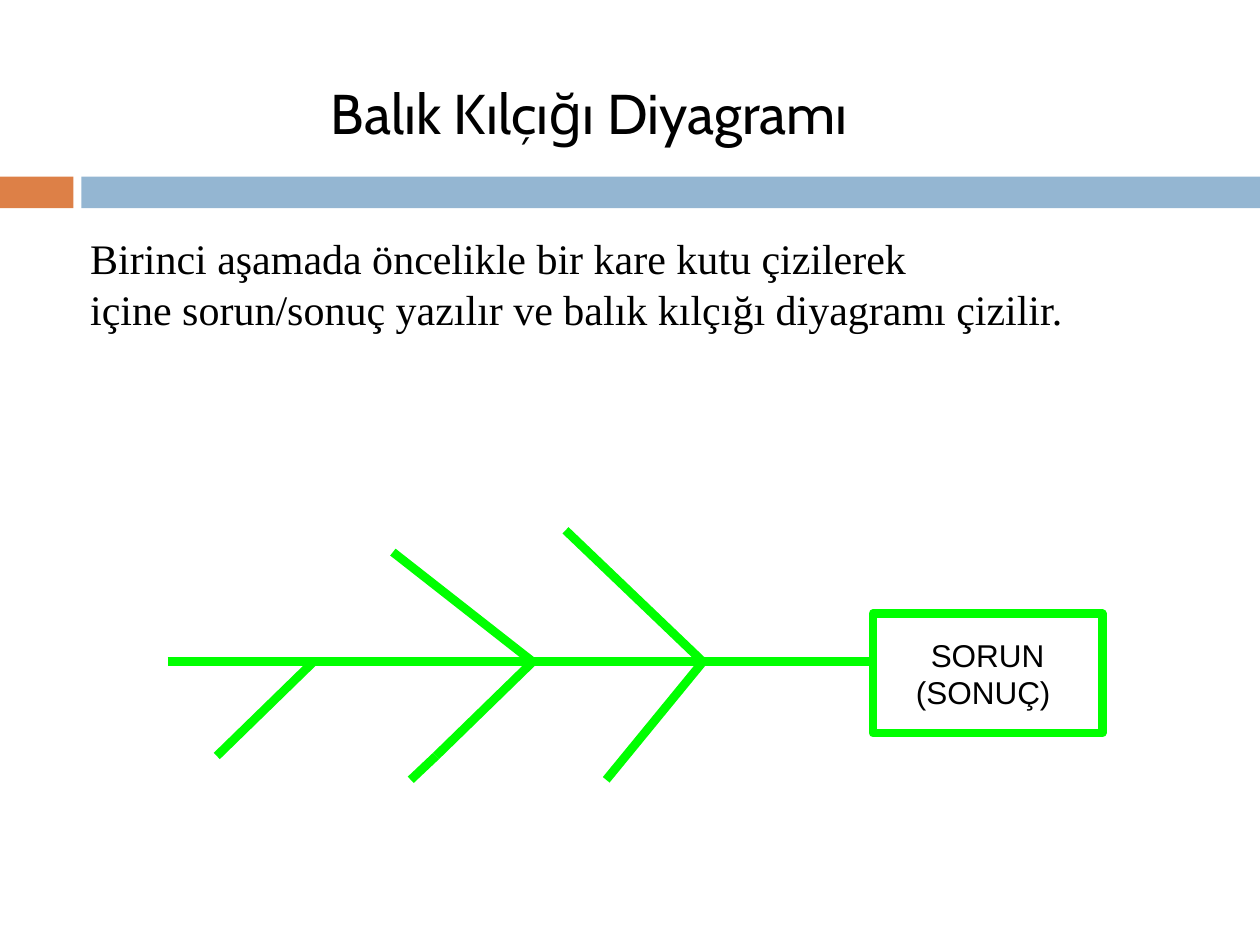
from dataclasses import dataclass

from lxml.etree import SubElement
from pptx import Presentation
from pptx.dml.color import RGBColor as RGB
from pptx.enum.shapes import MSO_CONNECTOR as Link, MSO_SHAPE as Form
from pptx.enum.text import MSO_ANCHOR as Anchor, MSO_AUTO_SIZE as Fit, PP_ALIGN as Align
from pptx.oxml.ns import qn
from pptx.util import Cm, Pt


@dataclass(frozen=True)
class Theme:
    ink: RGB = RGB(0, 0, 0)
    accent: RGB = RGB(0xDD, 0x80, 0x47)
    band: RGB = RGB(0x94, 0xB6, 0xD2)
    bone: RGB = RGB(0, 0xFF, 0)
    weight: int = 5
    title: tuple = ("Cabin", 32)
    body: tuple = ("Times New Roman", 24)
    label: tuple = ("Arial", 18)


class Page:
    def __init__(self, slide, theme):
        self.shapes = slide.shapes
        self.theme = theme

    def fill_text(self, frame, text, font, align):
        frame.text = text
        for para in frame.paragraphs:
            para.alignment = align
            for run in para.runs:
                run.font.name, run.font.size = font[0], Pt(font[1])
                run.font.color.rgb = self.theme.ink

    def text(self, area, text, font, align=Align.LEFT, wrap=True):
        frame = self.shapes.add_textbox(*map(Cm, area)).text_frame
        frame.word_wrap = wrap
        self.fill_text(frame, text, font, align)
        return frame

    def rect(self, area):
        shape = self.shapes.add_shape(Form.RECTANGLE, *map(Cm, area))
        shape.shadow.inherit = False
        return shape

    def bar(self, area, color):
        shape = self.rect(area)
        shape.fill.solid()
        shape.fill.fore_color.rgb = color
        shape.line.fill.background()

    def stroke(self, line):
        line.color.rgb = self.theme.bone
        line.width = Pt(self.theme.weight)

    def box(self, area, text):
        shape = self.rect(area)
        shape.fill.background()
        self.stroke(shape.line)
        shape.text_frame.vertical_anchor = Anchor.MIDDLE
        self.fill_text(shape.text_frame, text, self.theme.label, Align.CENTER)

    def bone(self, start, end):
        line = self.shapes.add_connector(Link.STRAIGHT, *map(Cm, (*start, *end)))
        self.stroke(line.line)
        SubElement(line._element.spPr, qn("a:effectLst"))


def main():
    deck = Presentation()
    deck.slide_width, deck.slide_height = Cm(25.4), Cm(19.05)
    theme = Theme()
    page = Page(deck.slides.add_slide(deck.slide_layouts[6]), theme)

    page.bar((0, 3.56, 1.48, 0.64), theme.accent)
    page.bar((1.64, 3.56, 23.76, 0.64), theme.band)

    body = page.text(
        (1.57, 4.57, 20.5, 2.31),
        "Birinci aşamada öncelikle bir kare kutu çizilerek\n"
        "içine sorun/sonuç yazılır ve balık kılçığı diyagramı çizilir.",
        theme.body, wrap=False)
    body.auto_size = Fit.SHAPE_TO_FIT_TEXT
    title = page.text((0.58, 1.37, 22.61, 1.8), "Balık Kılçığı Diyagramı",
                      theme.title, Align.CENTER)
    title.vertical_anchor = Anchor.MIDDLE

    spine, head = 13.34, 17.6
    page.bone((3.38, spine), (head, spine))
    ribs = {
        6.32: [(4.37, 15.24)],
        10.74: [(7.92, 11.13), (8.79, 15.24)],
        14.17: [(11.4, 10.69), (12.22, 15.72)],
    }
    for joint, tips in ribs.items():
        for tip in tips:
            page.bone((joint, spine), tip)
    page.bone((8.79, 15.24), (8.28, 15.72))
    page.box((head, 12.37, 4.62, 2.41), "SORUN\n(SONUÇ) ")

    deck.save("out.pptx")


if __name__ == "__main__":
    main()
